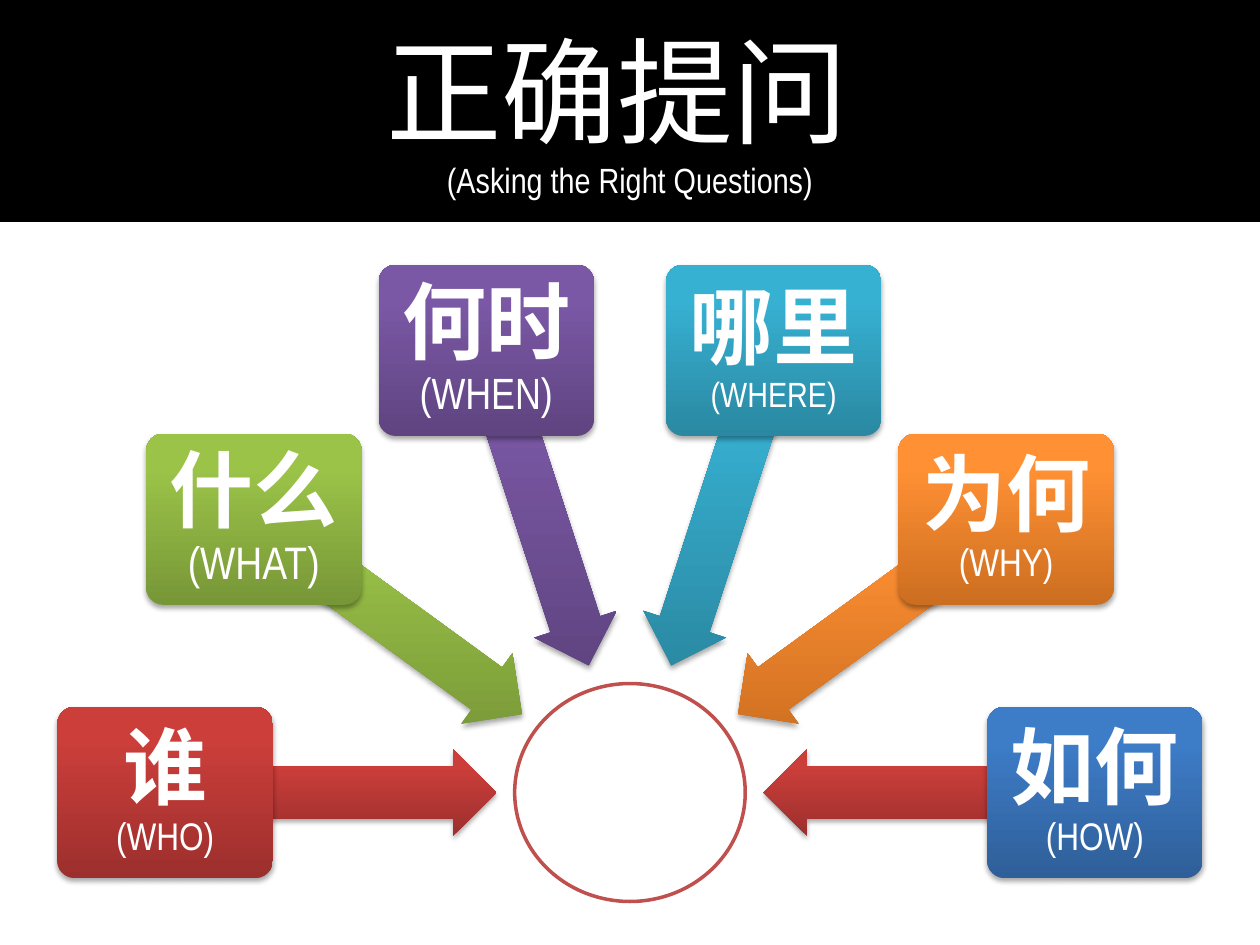
"""Build a slide of six question cards pointing at a central hub."""
import math

import lxml.etree
import pptx
import pptx.dml.color
import pptx.enum.shapes
import pptx.enum.text
import pptx.oxml.ns
import pptx.util

Inches = pptx.util.Inches
SHAPE = pptx.enum.shapes.MSO_SHAPE
QN = pptx.oxml.ns.qn


def color(value):
    """Turn a hex string into a colour."""
    return pptx.dml.color.RGBColor.from_string(value)


def write_text(shape, runs, frame_format):
    """Write centred white runs of (text, size, bold) into one paragraph."""
    frame = shape.text_frame
    for name, value in frame_format.items():
        setattr(frame, name, value)
    para = frame.paragraphs[0]
    para.alignment = pptx.enum.text.PP_ALIGN.CENTER
    for text, size, bold in runs:
        if para.runs and text.startswith("(Asking"):
            para.add_line_break()
        span = para.add_run()
        span.text = text
        font_format = {"name": "Arial Narrow", "size": pptx.util.Pt(size), "bold": bold}
        for name, value in font_format.items():
            setattr(span.font, name, value)
        span.font.color.rgb = color("FFFFFF")
    return para


deck = pptx.Presentation()
deck.slide_width, deck.slide_height = Inches(10), Inches(7.5)
page = deck.slides.add_slide(deck.slide_layouts[5])

title = page.shapes.title
title_place = {"left": 0, "top": 0, "width": Inches(10), "height": Inches(1.75)}
for name, value in title_place.items():
    setattr(title, name, value)
title.fill.solid()
title.fill.fore_color.rgb = color("000000")
title.line.color.rgb = color("000000")
title.line.width = pptx.util.Pt(2)
middle = {
    "word_wrap": True,
    "auto_size": pptx.enum.text.MSO_AUTO_SIZE.NONE,
    "vertical_anchor": pptx.enum.text.MSO_ANCHOR.MIDDLE,
}
write_text(title, [("正确提问 ", 66, False), ("(Asking the Right Questions)", 20, False)], middle)

hub_x, hub_y = 5, 6.29
hub_width, hub_height = 1.83, 1.73
hub = page.shapes.add_shape(
    SHAPE.OVAL,
    Inches(hub_x - hub_width / 2), Inches(hub_y - hub_height / 2),
    Inches(hub_width), Inches(hub_height),
)
hub.fill.solid()
hub.fill.fore_color.rgb = color("FFFFFF")
hub.line.color.rgb = color("C0504D")
hub.line.width = pptx.util.Pt(2)
hub.shadow.inherit = False

red = ("9C2F2D", "CB3E3A")
green = ("779737", "9BC348")
purple = ("5F4480", "7B58A6")
teal = ("2A88A2", "37B1D2")
orange = ("CC6E20", "FF9034")
blue = ("2F5F99", "3D7CC7")
questions = [
    ("谁 ", "(WHO)", 22, red, red),
    ("什么 ", "(WHAT)", 26, green, green),
    ("何时 ", "(WHEN)", 25, purple, purple),
    ("哪里 ", "(WHERE)", 20, teal, teal),
    ("为何 ", "(WHY)", 22, orange, orange),
    ("如何 ", "(HOW)", 22, blue, red),
]
card_text = middle | {
    f"margin_{side}": Inches(0.06) for side in ("left", "right", "top", "bottom")
}

for index, (word, english, size, card_colors, arrow_colors) in enumerate(questions):
    turn = 180 + 36 * index
    angle = math.radians(turn)
    pieces = [
        (SHAPE.LEFT_ARROW, 2.38, 2.64, 0.69, (0.6, 0.5), arrow_colors),
        (SHAPE.ROUNDED_RECTANGLE, 3.69, 1.71, 1.36, (0.1,), card_colors),
    ]
    for kind, radius, width, height, adjustments, shades in pieces:
        box = page.shapes.add_shape(
            kind,
            Inches(hub_x + radius * math.cos(angle) - width / 2),
            Inches(hub_y + radius * math.sin(angle) - height / 2),
            Inches(width), Inches(height),
        )
        for place, value in enumerate(adjustments):
            box.adjustments[place] = value
        box.fill.gradient()
        box.fill.gradient_angle = 90
        for stop, position, shade in zip(box.fill.gradient_stops, (0, 0.8), shades):
            stop.position = position
            stop.color.rgb = color(shade)
        box.line.fill.background()
        box.shadow.inherit = False
        properties = box.element.spPr
        properties.find(QN("a:gradFill")).set("rotWithShape", "0")
        shadow = lxml.etree.SubElement(
            properties.find(QN("a:effectLst")), QN("a:outerShdw"),
            blurRad=str(pptx.util.Pt(3.1)), dist=str(pptx.util.Pt(1.8)),
            dir="5400000", rotWithShape="0",
        )
        shade = lxml.etree.SubElement(shadow, QN("a:srgbClr"), val="000000")
        lxml.etree.SubElement(shade, QN("a:alpha"), val="35000")
        if kind == SHAPE.LEFT_ARROW:
            box.rotation = turn % 360
        else:
            para = write_text(box, [(word, 48, True), (english, size, False)], card_text)
            para.line_spacing = 0.9

deck.save("out.pptx")
